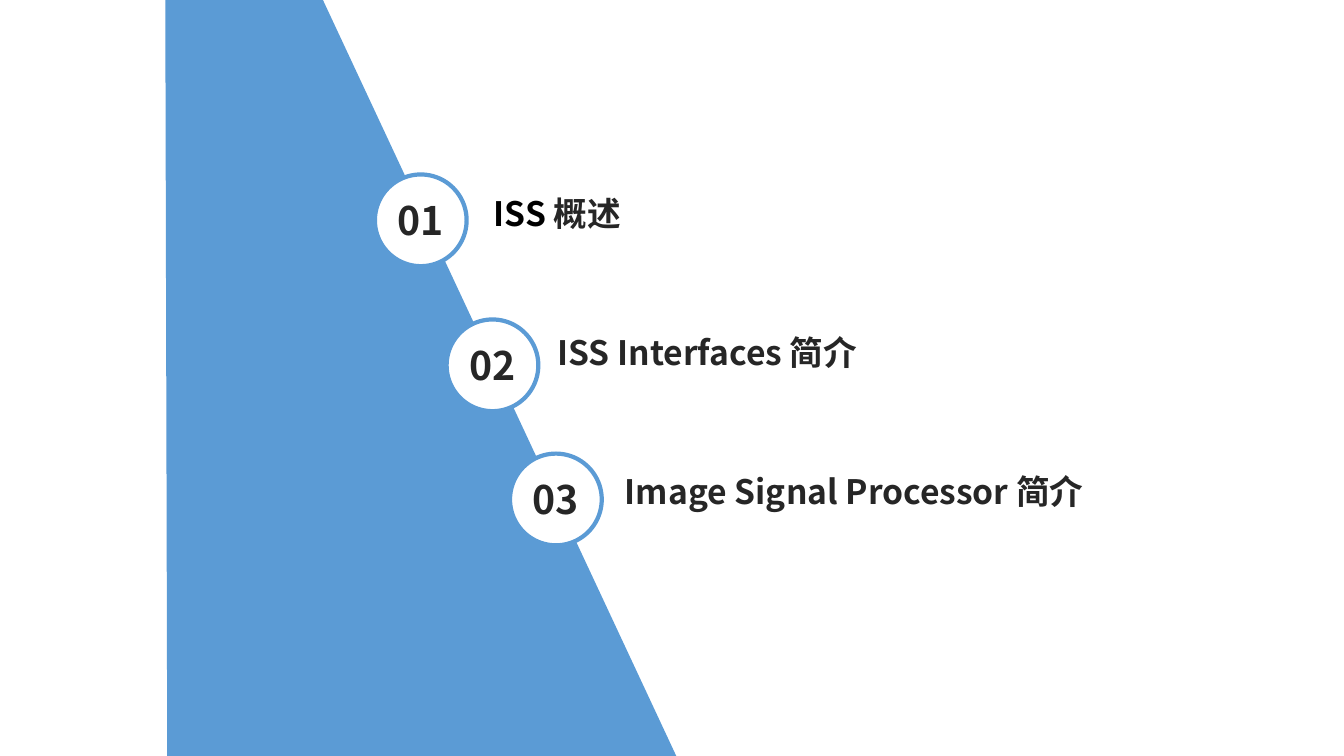
from pptx import Presentation
from pptx.dml.color import RGBColor as RGB
from pptx.enum.shapes import MSO_SHAPE as Shape
from pptx.enum.text import MSO_AUTO_SIZE as Fit, PP_ALIGN as Align
from pptx.oxml.ns import qn
from pptx.util import Pt
from lxml.etree import SubElement

# number, disc left, disc top, label left, label width, label runs (text, colour)
ITEMS = [
    ("01", 267.8, 124.6, 345.6, 440, [("ISS ", "black"), ("概述", "ink")]),
    ("02", 319, 228.2, 391, 394, [("ISS Interfaces 简介", "ink")]),
    ("03", 364.3, 324, 439.2, 428.4, [("Image Signal Processor 简介", "ink")]),
]
WEDGE = [(483.1, 540), (230.4, -0.7), (118.1, -0.7), (119.5, 542.9)]

THEME = {
    "blue": RGB(0x5B, 0x9B, 0xD5),
    "white": RGB(0xFF, 0xFF, 0xFF),
    "black": RGB(0, 0, 0),
    "ink": RGB(0x26, 0x26, 0x26),
    "font": "Noto Sans CJK SC",
    "number": 28,
    "label": 24,
}
DISC, RING = 65.5, 3
NUM_W, NUM_H, NUM_DY = 53.3, 42, 12.2
LABEL_TOP, LABEL_STEP, LABEL_H = 133.9, 99.4, 36


def add_text(shapes, box, runs, size, align=Align.LEFT):
    frame = shapes.add_textbox(*map(Pt, box)).text_frame
    frame.word_wrap = True
    frame.auto_size = Fit.SHAPE_TO_FIT_TEXT
    para = frame.paragraphs[0]
    para.alignment = align
    for text, color in runs:
        run = para.add_run()
        run.text = text
        font = run.font
        font.name, font.size, font.bold = THEME["font"], Pt(THEME[size]), True
        font.color.rgb = THEME[color]
        # East Asian glyphs take their font from a:ea
        props = run._r.get_or_add_rPr()
        SubElement(props, qn("a:ea")).set("typeface", THEME["font"])


def add_wedge(shapes):
    pen = shapes.build_freeform(*map(Pt, WEDGE[0]))
    pen.add_line_segments([(Pt(x), Pt(y)) for x, y in WEDGE[1:]], close=True)
    wedge = pen.convert_to_shape()
    wedge.shadow.inherit = False
    wedge.fill.solid()
    wedge.fill.fore_color.rgb = THEME["blue"]
    wedge.line.fill.background()


def add_badge(shapes, num, left, top):
    """Add a ringed disc grouped with its number."""
    parts = shapes.add_group_shape().shapes
    disc = parts.add_shape(Shape.OVAL, Pt(left), Pt(top), Pt(DISC), Pt(DISC))
    disc.shadow.inherit = False
    disc.fill.solid()
    disc.fill.fore_color.rgb = THEME["white"]
    disc.line.color.rgb = THEME["blue"]
    disc.line.width = Pt(RING)
    box = (left + (DISC - NUM_W) / 2, top + NUM_DY, NUM_W, NUM_H)
    add_text(parts, box, [(num, "ink")], "number", Align.CENTER)


def main():
    deck = Presentation()
    deck.slide_width, deck.slide_height = Pt(960), Pt(540)
    shapes = deck.slides.add_slide(deck.slide_layouts[6]).shapes
    add_wedge(shapes)
    for row, (num, left, top, text_x, width, runs) in enumerate(ITEMS):
        add_badge(shapes, num, left, top)
        box = (text_x, LABEL_TOP + row * LABEL_STEP, width, LABEL_H)
        add_text(shapes, box, runs, "label")
    deck.save("out.pptx")


if __name__ == "__main__":
    main()
